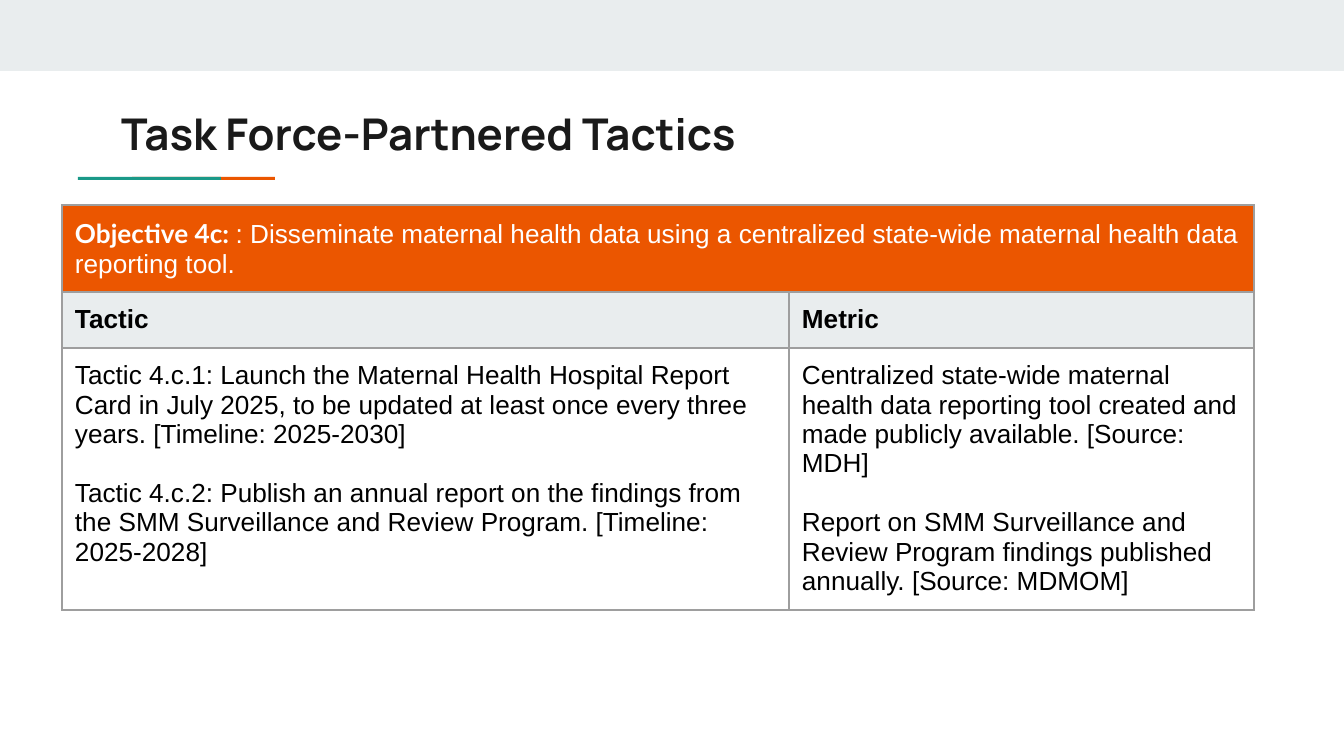
from lxml.etree import SubElement
from pptx import Presentation
from pptx.dml.color import RGBColor
from pptx.enum.shapes import MSO_SHAPE
from pptx.enum.text import MSO_ANCHOR, PP_ALIGN
from pptx.oxml.ns import qn
from pptx.util import Pt

EMU_PER_PX = 914400 / 134.4
WHITE = RGBColor(0xFF, 0xFF, 0xFF)
BLACK = RGBColor(0x00, 0x00, 0x00)
INK = RGBColor(0x1A, 0x1A, 0x1A)
MIST = RGBColor(0xE9, 0xED, 0xEE)
ORANGE = RGBColor(0xEB, 0x56, 0x00)
TEAL = RGBColor(0x1A, 0x99, 0x88)
GRAY = RGBColor(0x9E, 0x9E, 0x9E)

OBJECTIVE = (
    "Objective 4c:\u00a0",
    ": Disseminate maternal health data using a centralized state-wide maternal health data reporting tool.",
)
TACTICS = [
    ("Tactic 4.c.1: Launch the Maternal Health Hospital Report Card in July 2025, "
     "to be updated at least once every three years. [Timeline: 2025-2030]", 0),
    ("Tactic 4.c.2: Publish an annual report on the findings from the SMM Surveillance "
     "and Review Program. [Timeline: 2025-2028]", 16),
]
METRICS = [
    ("Centralized state-wide maternal", 0),
    ("health data reporting tool created and made publicly available. [Source: MDH]", 0),
    ("Report on SMM Surveillance and Review Program findings published annually. "
     "[Source: MDMOM]", 16),
]


def px(length):
    return round(length * EMU_PER_PX)


class SlideBuilder:
    title_font = "Manrope"
    label_font = "Lato"
    body_font = "Arial"
    title_size = 23.4
    body_size = 14
    inset = 13

    def __init__(self, page):
        self.page = page

    def style_font(self, font, name, size, color, bold=False):
        font.name = name
        font.size = Pt(size)
        font.bold = bold
        font.color.rgb = color

    def bar(self, left, top, width, height, color):
        bar = self.page.shapes.add_shape(
            MSO_SHAPE.RECTANGLE, px(left), px(top), px(width), px(height))
        bar.shadow.inherit = False
        bar.fill.solid()
        bar.fill.fore_color.rgb = color
        bar.line.fill.background()

    def title(self, text, left, top, width, height):
        title = self.page.shapes.title
        title.left, title.top = px(left), px(top)
        title.width, title.height = px(width), px(height)
        frame = title.text_frame
        frame.text = text
        frame.word_wrap = True
        frame.vertical_anchor = MSO_ANCHOR.MIDDLE
        frame.margin_left = frame.margin_right = px(self.inset)
        frame.margin_top = frame.margin_bottom = px(self.inset)
        paragraph = frame.paragraphs[0]
        paragraph.alignment = PP_ALIGN.LEFT
        self.style_font(paragraph.font, self.title_font, self.title_size, INK, True)

    def table(self, left, top, widths, heights):
        frame = self.page.shapes.add_table(
            len(heights), len(widths), px(left), px(top), px(sum(widths)), px(sum(heights)))
        table = frame.table
        table.first_row = table.horz_banding = False
        for column, width in zip(table.columns, widths):
            column.width = px(width)
        for row, height in zip(table.rows, heights):
            row.height = px(height)
        for cell in table.iter_cells():
            cell.margin_left = cell.margin_right = px(self.inset)
            cell.margin_top = cell.margin_bottom = px(self.inset)
            self.borders(cell)
            cell.fill.background()
        return table

    def borders(self, cell):
        properties = cell._tc.get_or_add_tcPr()
        for side in ("a:lnL", "a:lnR", "a:lnT", "a:lnB"):
            line = SubElement(properties, qn(side), w=str(Pt(0.75)))
            fill = SubElement(line, qn("a:solidFill"))
            SubElement(fill, qn("a:srgbClr"), val=str(GRAY))

    def fill_cell(self, cell, color):
        cell.fill.solid()
        cell.fill.fore_color.rgb = color

    def cell_text(self, cell, lines, bold=False):
        frame = cell.text_frame
        for index, (text, gap) in enumerate(lines):
            paragraph = frame.add_paragraph() if index else frame.paragraphs[0]
            paragraph.text = text
            if gap:
                paragraph.space_before = Pt(gap)
            self.style_font(paragraph.font, self.body_font, self.body_size, BLACK, bold)

    def labelled_text(self, cell, label, text):
        paragraph = cell.text_frame.paragraphs[0]
        for words, name, bold in ((label, self.label_font, True), (text, self.body_font, False)):
            span = paragraph.add_run()
            span.text = words
            self.style_font(span.font, name, self.body_size, WHITE, bold)


def main():
    deck = Presentation()
    deck.slide_width, deck.slide_height = px(1344), px(756)
    builder = SlideBuilder(deck.slides.add_slide(deck.slide_layouts[5]))

    builder.bar(0, 0, 1344, 71, MIST)
    for left, color in ((132, ORANGE), (78, TEAL)):
        builder.bar(left, 177, 143, 3, color)
    builder.title("Task Force-Partnered Tactics", 108, 93, 1130, 79)

    table = builder.table(62, 205, (727, 465), (87, 56, 262))
    objective = table.cell(0, 0)
    objective.merge(table.cell(0, 1))
    builder.fill_cell(objective, ORANGE)
    builder.labelled_text(objective, *OBJECTIVE)
    for column, (heading, lines) in enumerate((("Tactic", TACTICS), ("Metric", METRICS))):
        header = table.cell(1, column)
        builder.fill_cell(header, MIST)
        builder.cell_text(header, [(heading, 0)], bold=True)
        builder.cell_text(table.cell(2, column), lines)

    deck.save("out.pptx")


if __name__ == "__main__":
    main()
